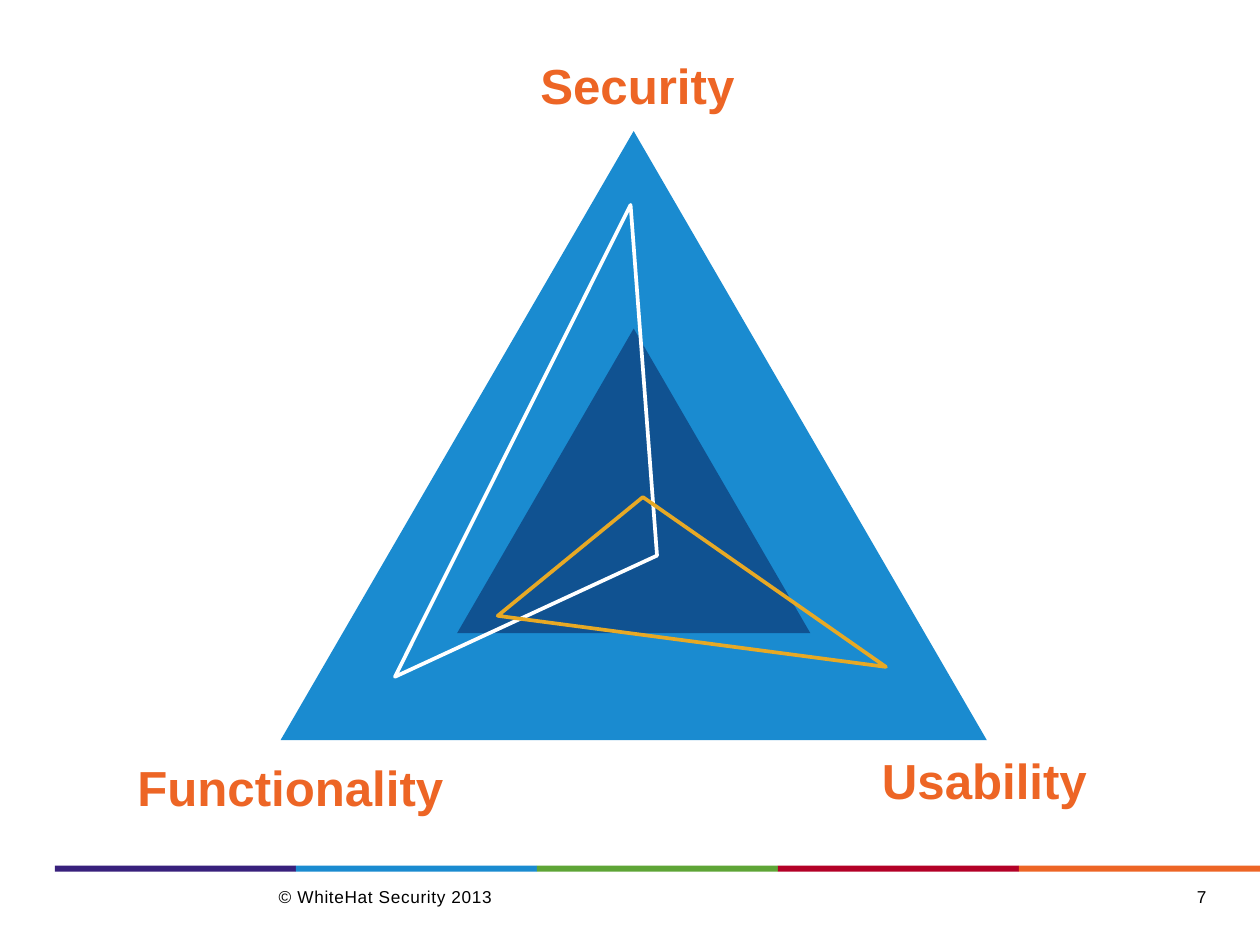
from dataclasses import dataclass

from pptx import Presentation
from pptx import util as u
from pptx.dml.color import RGBColor
from pptx.enum import shapes, text
from pptx.oxml.ns import qn
from lxml import etree


@dataclass(frozen=True)
class Theme:
    font: str = "Arial"
    label_size: float = 40
    footer_size: float = 14
    outline_width: float = 3
    ink: str = "000000"
    orange: str = "ED6525"
    blue: str = "1A8BD0"
    navy: str = "105291"
    white: str = "FFFFFF"
    amber: str = "E7A925"
    stripes: tuple = ("38207C", "1A8BD0", "5EA536", "B30027", "ED6525")


@dataclass(frozen=True)
class Box:
    left: float
    top: float
    width: float
    height: float

    def inner(self, left, top, width, height):
        """Box given by offsets from this one's top left corner."""
        return Box(self.left + left, self.top + top, width, height)

    def lengths(self):
        return [u.Pt(n) for n in (self.left, self.top, self.width, self.height)]


THEME = Theme()
ALIGN = text.PP_ALIGN


def add_solid(page, kind, box, colour):
    shape = page.shapes.add_shape(kind, *box.lengths())
    shape.shadow.inherit = False
    shape.fill.solid()
    shape.fill.fore_color.rgb = RGBColor.from_string(colour)
    shape.line.fill.background()


def add_outline(page, box, corners, colour):
    """Closed line through corners given as offsets from the box."""
    points = [(u.Pt(box.left + x), u.Pt(box.top + y)) for x, y in corners]
    builder = page.shapes.build_freeform(*points[0])
    builder.add_line_segments(points[1:], close=True)
    shape = builder.convert_to_shape()
    shape.shadow.inherit = False
    shape.fill.background()
    shape.line.color.rgb = RGBColor.from_string(colour)
    shape.line.width = u.Pt(THEME.outline_width)
    etree.SubElement(shape.line._get_or_add_ln(), qn("a:round"))


def add_text(page, box, words, size, colour, align, bold=False):
    frame = page.shapes.add_textbox(*box.lengths()).text_frame
    frame.word_wrap = True
    para = frame.paragraphs[0]
    para.alignment = align
    span = para.add_run()
    span.text = words
    font = para.font
    font.name, font.size, font.bold = THEME.font, u.Pt(size), bold
    font.color.rgb = RGBColor.from_string(colour)
    return frame, span


def add_footer(page, box):
    stripe_width = box.width / len(THEME.stripes)
    for index, colour in enumerate(THEME.stripes):
        stripe = box.inner(index * stripe_width, 0, stripe_width, 5)
        add_solid(page, shapes.MSO_SHAPE.RECTANGLE, stripe, colour)

    for words, left, width, align in (
        ("© WhiteHat Security 2013", 182, 438, ALIGN.LEFT),
        ("7", 717, 219, ALIGN.RIGHT),
    ):
        frame, span = add_text(page, box.inner(left, 16.5, width, 29.5), words,
                               THEME.footer_size, THEME.ink, align)
        frame.margin_left = frame.margin_right = 0
        frame.margin_top = frame.margin_bottom = 0
        span._r.get_or_add_rPr().set("spc", "50")


def add_tradeoff_triangle(page, box):
    triangle = shapes.MSO_SHAPE.ISOSCELES_TRIANGLE
    core = box.inner(box.width / 4, 160.5, box.width / 2, box.height / 2)
    add_solid(page, triangle, box, THEME.blue)
    add_solid(page, triangle, core, THEME.navy)

    add_outline(page, box, [(93, 443.5), (284.5, 60), (306, 345)], THEME.white)
    add_outline(page, box, [(176.5, 394), (294.5, 297.5), (492, 435.5)], THEME.amber)

    for words, left, top, width in (
        ("Security", 194, -65, 192),
        ("Functionality", -130, 505.5, 276),
        ("Usability", 476, 499.5, 192),
    ):
        add_text(page, box.inner(left, top, width, 55.5), words,
                 THEME.label_size, THEME.orange, ALIGN.CENTER, bold=True)


def main():
    deck = Presentation()
    deck.slide_width, deck.slide_height = u.Pt(1024), u.Pt(768)
    page = deck.slides.add_slide(deck.slide_layouts[6])
    add_footer(page, Box(44.5, 703.5, 979.5, 46))
    add_tradeoff_triangle(page, Box(228, 106.5, 574, 495))
    deck.save("out.pptx")


if __name__ == "__main__":
    main()
